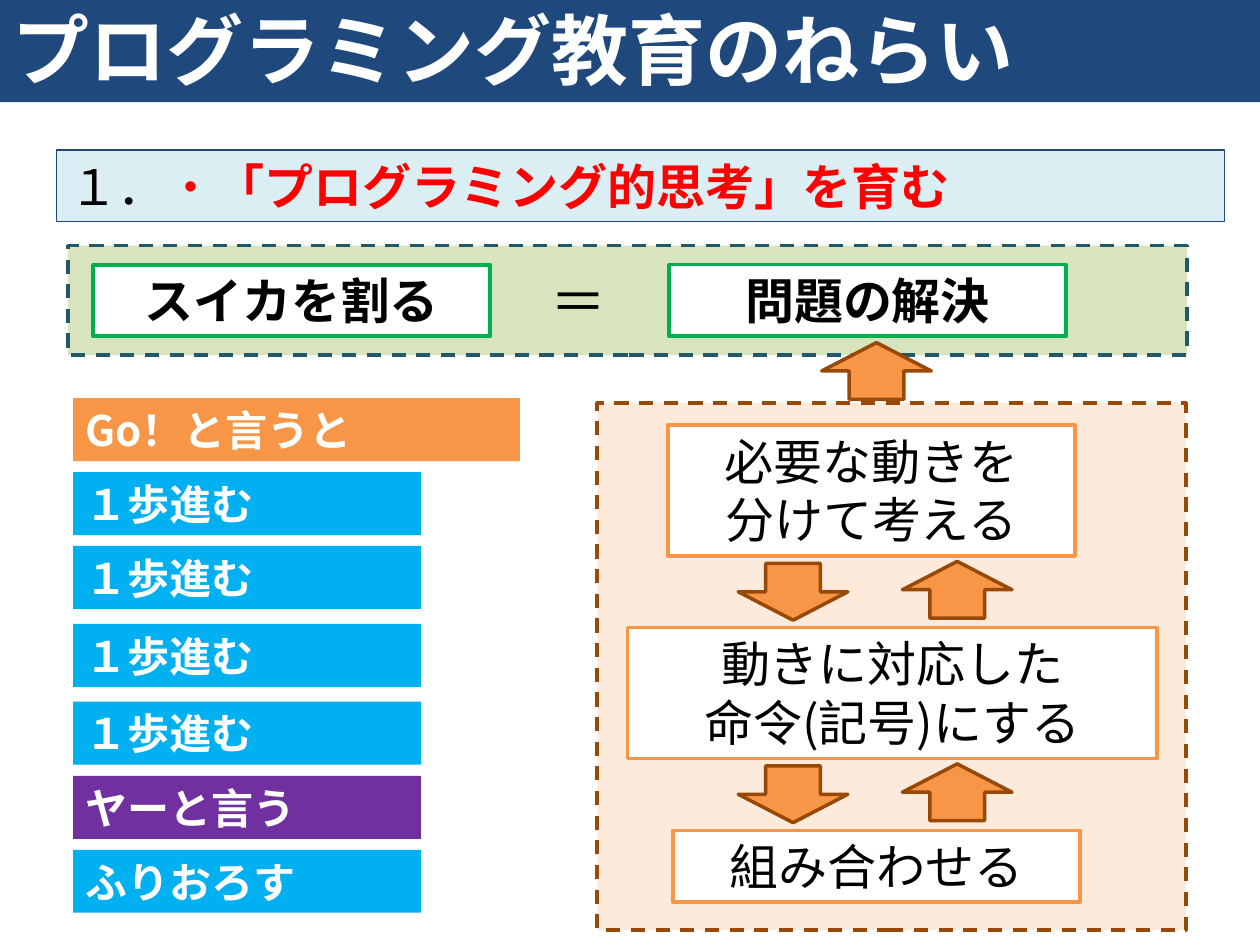
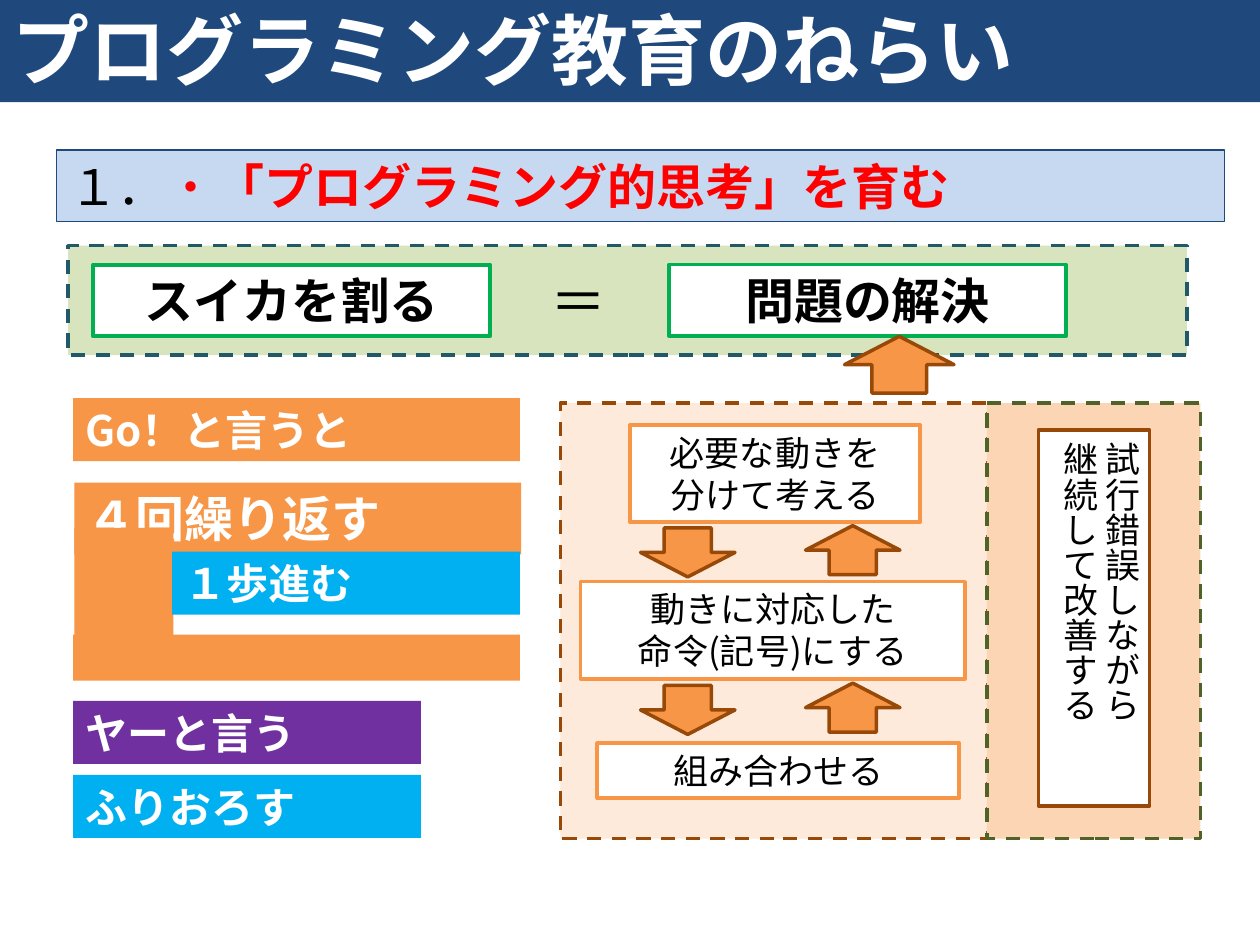
from pptx import Presentation
from pptx.dml.color import RGBColor
from pptx.enum.dml import MSO_LINE
from pptx.enum.shapes import MSO_SHAPE
from pptx.enum.text import MSO_ANCHOR, MSO_AUTO_SIZE, PP_ALIGN
from pptx.oxml.ns import qn
from pptx.util import Pt

RECTANGLE = MSO_SHAPE.RECTANGLE
DOWN = MSO_SHAPE.DOWN_ARROW
UP = MSO_SHAPE.UP_ARROW
DASH = MSO_LINE.DASH
TOP, MIDDLE = MSO_ANCHOR.TOP, MSO_ANCHOR.MIDDLE
LEFT, CENTER = PP_ALIGN.LEFT, PP_ALIGN.CENTER
FIT_SHAPE = MSO_AUTO_SIZE.SHAPE_TO_FIT_TEXT

JAPANESE_FONT = "Noto Sans CJK JP"
NAVY, WHITE, BLACK, RED = "1F497D", "FFFFFF", "000000", "FF0000"
ORANGE, BROWN, BLUE, PURPLE = "F79646", "984807", "00B0F0", "7030A0"
GREEN, PALE_GREEN, TEAL, PEACH = "00B050", "D7E4BD", "215968", "FDEADA"

BLOCK_LEFT, BLOCK_WIDTH, BLOCK_HEIGHT = 41.8, 198.7, 36
WIDE_BLOCK = 255.3
LARGE_ARROW = (62.6, 32.4)
SMALL_ARROW = (54, 28)
FLOW_STEPS = ("必要な動きを\n分けて考える", "動きに対応した\n命令(記号)にする", "組み合わせる")


def color(hex_string):
    return RGBColor.from_string(hex_string)


def style_span(span, size, ink, bold=False, font=JAPANESE_FONT):
    span.font.size = Pt(size)
    span.font.color.rgb = color(ink)
    span.font.bold = bold
    span.font.name = font
    east_asian = span.font._element.makeelement(qn("a:ea"), {"typeface": font})
    span.font._element.find(qn("a:latin")).addnext(east_asian)


def set_frame(box, anchor=TOP):
    frame = box.text_frame
    frame.word_wrap = True
    frame.auto_size = FIT_SHAPE
    frame.vertical_anchor = anchor
    return frame


def write(box, text, size, ink, bold=False, align=LEFT, anchor=TOP, font=JAPANESE_FONT):
    frame = set_frame(box, anchor)
    frame.text = text
    for para in frame.paragraphs:
        para.alignment = align
        for span in para.runs:
            style_span(span, size, ink, bold, font)


def add_box(page, place, fill, line=None, width=2, dash=None, kind=RECTANGLE):
    box = page.shapes.add_shape(kind, *(Pt(length) for length in place))
    box.shadow.inherit = False
    box.fill.solid()
    box.fill.fore_color.rgb = color(fill)
    if line:
        box.line.color.rgb = color(line)
        box.line.width = Pt(width)
        if dash:
            box.line.dash_style = dash
    else:
        box.line.fill.background()
    return box


def add_arrow(page, kind, left, top, size=LARGE_ARROW):
    add_box(page, (left, top, *size), ORANGE, BROWN, kind=kind)


def add_card(page, place, text, size, line=ORANGE, bold=False, width=2):
    card = add_box(page, place, WHITE, line, width)
    write(card, text, size, BLACK, bold, CENTER)
    return card


def add_block(page, top, text, fill=BLUE, left=BLOCK_LEFT, width=BLOCK_WIDTH, anchor=MIDDLE):
    """Add one command of the program on the left side."""
    block = add_box(page, (left, top, width, BLOCK_HEIGHT), fill)
    write(block, text, 24, WHITE, True, anchor=anchor)


def add_heading(page, fill):
    heading = add_box(page, (32.4, 85.7, 667.4, 41), fill, NAVY, 0.75)
    para = set_frame(heading).paragraphs[0]
    para.alignment = LEFT
    for text, ink, bold in (("１．", BLACK, False), ("・", RED, False),
                            ("「プログラミング的思考」を育む", RED, True)):
        span = para.add_run()
        span.text = text
        style_span(span, 28, ink, bold)


def add_common_parts(page, heading_fill, panel):
    """Add title, heading, equation, flow panel and the first command."""
    add_box(page, (38.9, 140.4, 639.4, 62.6), PALE_GREEN, TEAL, dash=DASH)
    add_box(page, panel, PEACH, BROWN, dash=DASH)
    title = add_box(page, (0, -2.2, 720, 60.6), NAVY)
    write(title, "プログラミング教育のねらい", 44, WHITE, True)
    add_heading(page, heading_fill)
    add_card(page, (53.3, 151.2, 226.8, 41), "スイカを割る", 28, GREEN, True, 2.25)
    add_card(page, (382.3, 151.2, 226.8, 41), "問題の解決", 28, GREEN, True)
    equals = page.shapes.add_textbox(Pt(288), Pt(149), Pt(85.7), Pt(46))
    write(equals, "＝", 32, BLACK, align=CENTER, font="Calibri")
    add_block(page, 227.5, "Go！と言うと", ORANGE, width=WIDE_BLOCK, anchor=TOP)


def add_flow(page, places, size, step, down_at, up_at, arrow_size):
    """Add the three steps and the arrow pairs, one pair every step points."""
    for place, text in zip(places, FLOW_STEPS):
        add_card(page, place, text, size)
    for row in range(len(places) - 1):
        for kind, (left, top) in ((DOWN, down_at), (UP, up_at)):
            add_arrow(page, kind, left, top + row * step, arrow_size)


def build_sequence_page(page):
    add_common_parts(page, "DBEEF4", (341.3, 230.4, 336.4, 301))
    for top in (269.8, 312, 356.5, 401):
        add_block(page, top, "１歩進む")
    add_block(page, 443.4, "ヤーと言う", PURPLE)
    add_block(page, 485.6, "ふりおろす")
    places = ((381.6, 242.8, 232.6, 75), (358.6, 358.6, 302.6, 75), (384.5, 474.5, 232.6, 41))
    add_flow(page, places, 28, 115.7, (421.9, 322), (515.7, 320.8), LARGE_ARROW)
    add_arrow(page, UP, 469.6, 195.8)


def build_loop_page(page):
    add_common_parts(page, "C6D9F1", (320.2, 230.4, 244, 248.8))
    add_block(page, 400.5, "ヤーと言う", PURPLE)
    add_block(page, 442.8, "ふりおろす")

    loop = add_box(page, (42.5, 275.8, WIDE_BLOCK, 41), ORANGE)
    write(loop, "４回繰り返す", 28, WHITE, True)
    add_box(page, (42.5, 301.7, 56.7, 76.3), ORANGE)
    add_box(page, (BLOCK_LEFT, 362.6, WIDE_BLOCK, 26.4), ORANGE)
    add_block(page, 315.2, "１歩進む", left=98.4)

    places = ((360, 242.8, 165.8, 55.6), (331.7, 332.4, 219.8, 55.6), (341.3, 424.6, 206.8, 31.5))
    add_flow(page, places, 20, 90, (366, 301.7), (460.3, 300.4), SMALL_ARROW)
    add_arrow(page, UP, 482.6, 192.2)

    add_box(page, (564, 230.4, 122, 248.8), "FCD5B5", "4F6228", dash=DASH)
    review = add_card(page, (593.4, 245.6, 63.4, 215), "試行錯誤しながら\n継続して改善する", 20, BROWN)
    review.text_frame._txBody.bodyPr.set("vert", "eaVert")


def main():
    deck = Presentation()
    deck.slide_width, deck.slide_height = Pt(720), Pt(540)
    blank = deck.slide_layouts[6]
    for build in (build_sequence_page, build_loop_page):
        build(deck.slides.add_slide(blank))
    deck.save("out.pptx")


if __name__ == "__main__":
    main()
